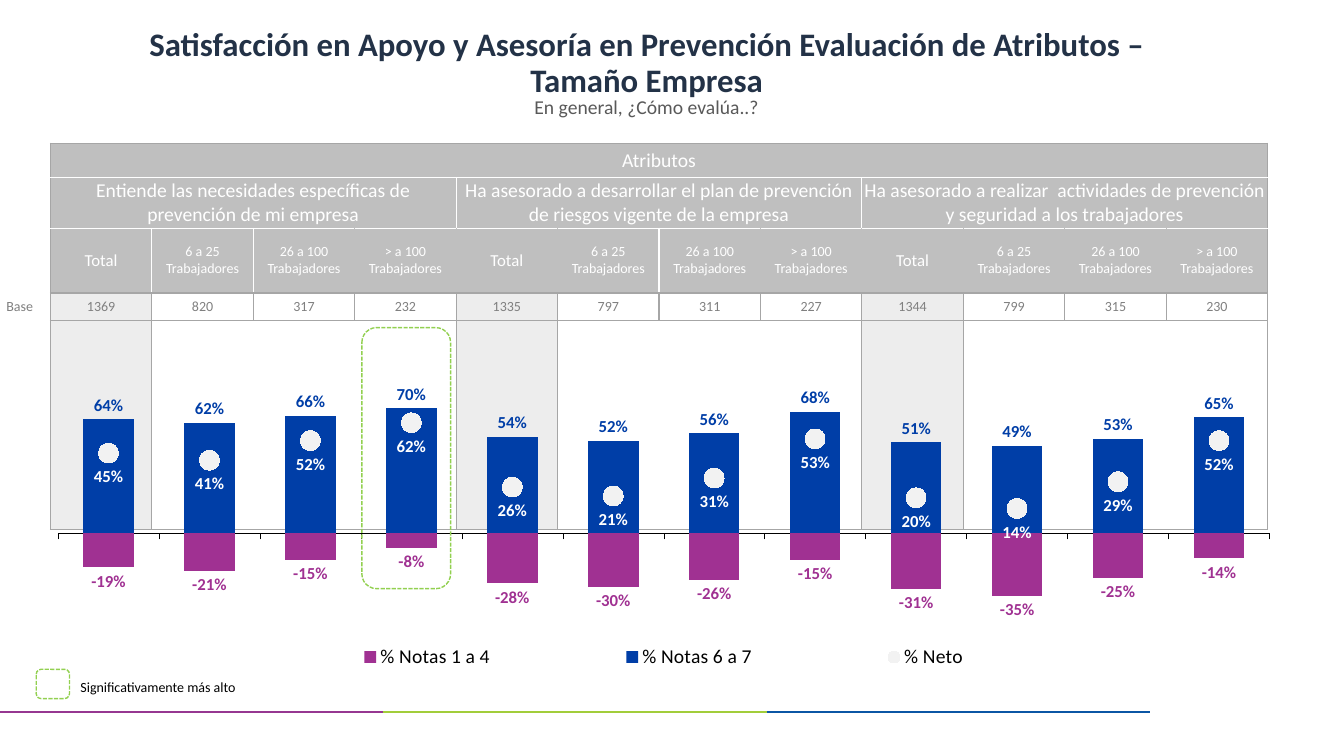
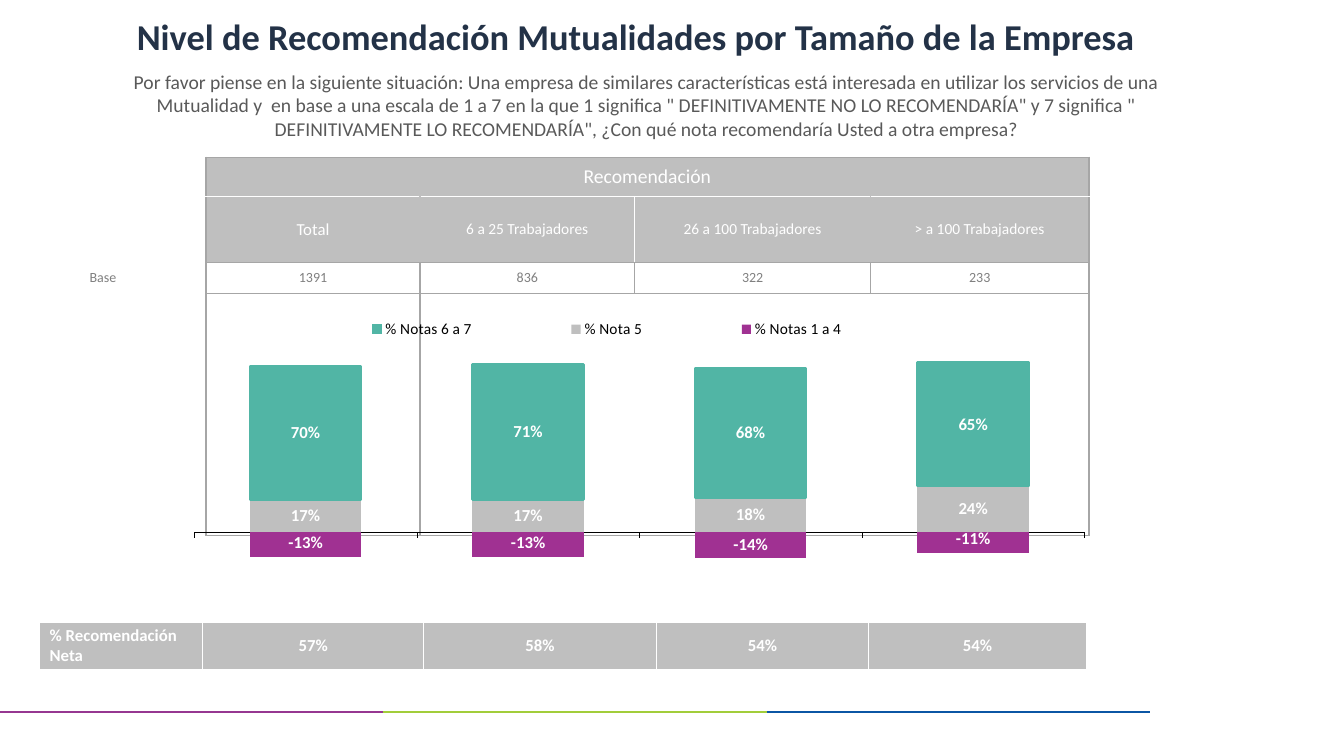
from copy import deepcopy
from dataclasses import dataclass

from lxml import etree
from pptx import Presentation
from pptx.chart.data import CategoryChartData
from pptx.dml.color import RGBColor
from pptx.enum.chart import (XL_CHART_TYPE, XL_LABEL_POSITION, XL_LEGEND_POSITION,
                             XL_MARKER_STYLE, XL_TICK_LABEL_POSITION, XL_TICK_MARK)
from pptx.enum.dml import MSO_LINE
from pptx.enum.shapes import MSO_CONNECTOR, MSO_SHAPE
from pptx.enum.text import MSO_ANCHOR, PP_ALIGN
from pptx.oxml.ns import qn
from pptx.util import Inches, Pt

CLUSTERED, STACKED = XL_CHART_TYPE.COLUMN_CLUSTERED, XL_CHART_TYPE.COLUMN_STACKED
OUTSIDE, INSIDE = XL_LABEL_POSITION.OUTSIDE_END, XL_LABEL_POSITION.INSIDE_END
CENTRED, BELOW = XL_LABEL_POSITION.CENTER, XL_LABEL_POSITION.BELOW
LEFT, CENTER = PP_ALIGN.LEFT, PP_ALIGN.CENTER
TOP, MIDDLE = MSO_ANCHOR.TOP, MSO_ANCHOR.MIDDLE
BLANK_LAYOUT = 6
GRID_COLUMNS, GRID_ROWS = 40, 22.5
SIZES = ["6 a 25 Trabajadores", "26 a 100 Trabajadores", "> a 100 Trabajadores"]


@dataclass(frozen=True)
class Theme:
    font: str = "Calibri"
    chart_font: str = "TeX Gyre Adventor"
    navy: str = "233247"
    text: str = "595959"
    muted: str = "808080"
    black: str = "000000"
    white: str = "FFFFFF"
    band: str = "BFBFBF"
    rule: str = "A6A6A6"
    shade: str = "EDEDED"
    dot: str = "F2F2F2"
    purple: str = "A03192"
    blue: str = "003EA7"
    teal: str = "51B5A5"
    highlight: str = "92D050"
    footer: tuple = ("963791", "A2CD3A", "0B56A4")
    title_size: float = 26
    long_title_size: float = 23.4
    body_size: float = 14
    label_size: float = 12
    head_size: float = 11
    small_size: float = 10


THEME = Theme()


@dataclass(frozen=True)
class CellStyle:
    fill: str = None
    size: float = THEME.small_size
    colour: str = THEME.white
    side: str = THEME.white
    top: str = THEME.white
    bottom: str = THEME.white
    outer: str = THEME.rule
    bold: bool = False
    align: PP_ALIGN = CENTER
    inset: float = 0.06


MARGIN = CellStyle(colour=THEME.muted)
CAPTION = CellStyle(THEME.band, THEME.body_size, top=THEME.rule)
GROUP = CellStyle(THEME.band, THEME.body_size)
TOTAL_HEAD = CellStyle(THEME.band, THEME.label_size, side=THEME.band, bottom=THEME.rule)
SMALL_HEAD = CellStyle(THEME.band, THEME.small_size, side=THEME.band, bottom=THEME.rule)
WIDE_HEAD = CellStyle(THEME.band, THEME.head_size, side=THEME.band, bottom=THEME.rule)
PLAIN = CellStyle(None, THEME.small_size, THEME.muted, THEME.rule, THEME.rule, THEME.rule)
SHADED = CellStyle(THEME.shade, THEME.small_size, THEME.muted, THEME.rule, THEME.rule, THEME.rule)
NET = CellStyle(THEME.band, THEME.label_size, outer=THEME.white, bold=True)
NET_LABEL = CellStyle(THEME.band, THEME.label_size, outer=THEME.white, bold=True,
                      align=LEFT, inset=0.3)


@dataclass(frozen=True)
class Measure:
    """One chart series and the look of its labels."""
    name: str
    values: tuple
    colour: str
    label_colour: str
    label_position: XL_LABEL_POSITION
    outline: str = None
    as_dots: bool = False


def units(value):
    """Turn grid units into slide lengths; a grid unit is a third of an inch."""
    return Inches(value / 3)


def rgb(colour):
    return RGBColor.from_string(colour)


def child(parent, tag, **attributes):
    return etree.SubElement(parent, qn(tag), **attributes)


def set_font(font, size, colour, bold=False, name=THEME.font):
    font.name, font.size, font.bold = name, Pt(size), bold
    font.color.rgb = rgb(colour)


def set_layout(parent, index, shares, inner=False):
    """Fix a chart part at shares (left, top, width, height) of the chart."""
    for old in parent.findall(qn("c:layout")):
        parent.remove(old)
    layout = etree.Element(qn("c:layout"))
    parent.insert(index, layout)
    manual = child(layout, "c:manualLayout")
    if inner:
        child(manual, "c:layoutTarget", val="inner")
    for side in "xy":
        child(manual, f"c:{side}Mode", val="edge")
    for side, share in zip("xywh", shares):
        child(manual, f"c:{side}", val=str(share))


def set_borders(cell, left, right, top, bottom):
    properties = cell._tc.get_or_add_tcPr()
    sides = zip(("a:lnL", "a:lnR", "a:lnT", "a:lnB"), (left, right, top, bottom))
    for position, (tag, colour) in enumerate(sides):
        line = etree.Element(qn(tag), w=str(Pt(1)))
        child(child(line, "a:solidFill"), "a:srgbClr", val=colour)
        properties.insert(position, line)


def move_to_lines(chart, index):
    """Move one column series to a line plot on the same axes."""
    columns = chart.plots[0]._element
    series = columns.findall(qn("c:ser"))[index]
    for flag in series.findall(qn("c:invertIfNegative")):
        series.remove(flag)
    lines = etree.Element(qn("c:lineChart"))
    columns.addnext(lines)
    child(lines, "c:grouping", val="standard")
    child(lines, "c:varyColors", val="0")
    lines.append(series)
    child(lines, "c:marker", val="1")
    for axis in columns.findall(qn("c:axId")):
        lines.append(deepcopy(axis))


class SurveyDeck:
    def __init__(self):
        self.deck = Presentation()
        self.deck.slide_width, self.deck.slide_height = units(GRID_COLUMNS), units(GRID_ROWS)
        self.page = None

    def new_page(self):
        self.page = self.deck.slides.add_slide(self.deck.slide_layouts[BLANK_LAYOUT])
        step, height = 11.41, 21.18
        for number, colour in enumerate(THEME.footer):
            line = self.page.shapes.add_connector(
                MSO_CONNECTOR.STRAIGHT, units(number * step), units(height),
                units((number + 1) * step), units(height))
            line.line.color.rgb, line.line.width = rgb(colour), Pt(1.5)
            child(line._element.spPr, "a:effectLst")

    def text(self, words, place, size, colour, bold=False, align=CENTER, anchor=TOP, spacing=1.0):
        box = self.page.shapes.add_textbox(*map(units, place))
        frame = box.text_frame
        frame.word_wrap, frame.vertical_anchor = True, anchor
        para = frame.paragraphs[0]
        para.alignment, para.line_spacing = align, spacing
        span = para.add_run()
        span.text = words
        set_font(span.font, size, colour, bold)

    def title(self, words, left, top, size=THEME.title_size):
        self.text(words, (left, top, 32.37, 1.83), size, THEME.navy, True,
                  anchor=MIDDLE, spacing=0.9)

    def question(self, words, top, height):
        self.text(words, (3.06, top, 32.37, height), THEME.body_size, THEME.text)

    def highlight(self, *place):
        frame = self.page.shapes.add_shape(MSO_SHAPE.ROUNDED_RECTANGLE, *map(units, place))
        frame.shadow.inherit = False
        frame.fill.background()
        frame.line.color.rgb, frame.line.width = rgb(THEME.highlight), Pt(1)
        frame.line.dash_style = MSO_LINE.SQUARE_DOT

    def table(self, left, top, widths, bands, white_joints=()):
        """Draw bands of (height, cells), each cell being (text, style, span)."""
        table = self.page.shapes.add_table(
            len(bands), len(widths), units(left), units(top), units(sum(widths)),
            units(sum(height for height, _ in bands))).table
        table.first_row = table.horz_banding = False
        for column, width in zip(table.columns, widths):
            column.width = units(width)
        for row, (height, cells) in enumerate(bands):
            table.rows[row].height = units(height)
            start = 0
            for words, style, span in cells:
                end = start + span
                joints = white_joints if style.side == THEME.band else ()
                left_edge = THEME.white if start in joints else style.side
                right_edge = THEME.white if end in joints else style.side
                if start == 1:
                    left_edge = style.outer
                if end in (1, len(widths)):
                    right_edge = style.outer
                if span > 1:
                    table.cell(row, start).merge(table.cell(row, end - 1))
                for column in range(start, end):
                    self.style_cell(table.cell(row, column), style)
                    set_borders(table.cell(row, column), left_edge, right_edge,
                                style.top, style.bottom)
                if words:
                    para = table.cell(row, start).text_frame.paragraphs[0]
                    para.alignment = style.align
                    run = para.add_run()
                    run.text = words
                    set_font(run.font, style.size, style.colour, style.bold)
                start = end

    @staticmethod
    def style_cell(cell, style):
        cell.margin_left = cell.margin_right = units(style.inset)
        cell.margin_top = cell.margin_bottom = 0
        cell.vertical_anchor = MIDDLE
        if style.fill:
            cell.fill.solid()
            cell.fill.fore_color.rgb = rgb(style.fill)
        else:
            cell.fill.background()

    def chart(self, kind, place, measures, plot_shares, legend_shares, legend_size):
        data = CategoryChartData(number_format="0%")
        data.categories = [str(n + 1) for n in range(len(measures[0].values))]
        for measure in measures:
            data.add_series(measure.name, measure.values)
        chart = self.page.shapes.add_chart(kind, *map(units, place), data).chart
        chart.has_title = False
        set_font(chart.font, 13.7, THEME.black, True, THEME.chart_font)
        plot = chart.plots[0]
        plot.gap_width, plot.overlap, plot.vary_by_categories = 100, 100, False
        for index, measure in enumerate(measures):
            if measure.as_dots:
                move_to_lines(chart, index)
        for series, measure in zip(chart.series, measures):
            self.style_series(series, measure)
        values, categories = chart.value_axis, chart.category_axis
        values.minimum_scale, values.maximum_scale, values.major_unit = -0.6, 1, 0.2
        values.has_major_gridlines = values.visible = False
        categories.tick_label_position = XL_TICK_LABEL_POSITION.NONE
        categories.major_tick_mark = XL_TICK_MARK.OUTSIDE
        categories.format.line.color.rgb = rgb(THEME.black)
        categories.format.line.width = Pt(0.25)
        chart.has_legend = True
        legend = chart.legend
        legend.position, legend.include_in_layout = XL_LEGEND_POSITION.LEFT, False
        set_font(legend.font, legend_size, THEME.black)
        set_layout(legend._element, 1, legend_shares)
        set_layout(plot._element.getparent(), 0, plot_shares, inner=True)

    @staticmethod
    def style_series(series, measure):
        look = series.format
        if measure.as_dots:
            series.smooth = False
            look.line.fill.background()
            series.marker.style, series.marker.size = XL_MARKER_STYLE.CIRCLE, 14
            look = series.marker.format
            look.line.fill.background()
        look.fill.solid()
        look.fill.fore_color.rgb = rgb(measure.colour)
        if measure.outline:
            look.line.color.rgb, look.line.width = rgb(measure.outline), Pt(1.75)
        labels = series.data_labels
        labels.show_value, labels.position = True, measure.label_position
        labels.number_format, labels.number_format_is_linked = "0%", False
        set_font(labels.font, THEME.label_size, measure.label_colour, True)


def attributes_page(survey):
    survey.new_page()
    groups = ["Entiende las necesidades específicas de prevención de mi empresa",
              "Ha asesorado a desarrollar el plan de prevención de riesgos vigente de la empresa",
              "Ha asesorado a realizar  actividades de prevención y seguridad a los trabajadores"]
    bases = [1369, 820, 317, 232, 1335, 797, 311, 227, 1344, 799, 315, 230]
    blank = ("", MARGIN, 1)
    heads = [("Total", TOTAL_HEAD, 1)] + [(size, SMALL_HEAD, 1) for size in SIZES]
    counts = [(str(base), PLAIN if n % 4 else SHADED, 1) for n, base in enumerate(bases)]
    survey.table(-0.33, 4.26, [1.83] + [3.02] * 12, [
        (1.03, [blank, ("Atributos", CAPTION, 12)]),
        (1.5, [blank] + [(group, GROUP, 4) for group in groups]),
        (1.93, [blank] + heads * 3),
        (0.81, [("Base", MARGIN, 1)] + counts),
        (6.24, [blank] + [("", SHADED, 1), ("", PLAIN, 3)] * 3)], (2, 3, 7))
    survey.chart(CLUSTERED, (0.6, 10.2, 37.56, 12.15), [
        Measure("% Notas 1 a 4", (-0.19, -0.21, -0.15, -0.08, -0.28, -0.3, -0.26, -0.15,
                                  -0.31, -0.35, -0.25, -0.14),
                THEME.purple, THEME.purple, OUTSIDE),
        Measure("% Notas 6 a 7", (0.64, 0.62, 0.66, 0.7, 0.54, 0.52, 0.56, 0.68,
                                  0.51, 0.49, 0.53, 0.65),
                THEME.blue, THEME.blue, OUTSIDE),
        Measure("% Neto", (0.45, 0.41, 0.52, 0.62, 0.26, 0.21, 0.31, 0.53,
                           0.2, 0.14, 0.29, 0.52),
                THEME.dot, THEME.white, BELOW, as_dots=True)],
        (0.03, 0.03, 0.96, 0.7), (0.17, 0.72, 0.68, 0.1), THEME.body_size)
    survey.highlight(1.08, 19.92, 0.99, 0.87)
    survey.text("Significativamente más alto", (2.1, 20.04, 5.7, 0.81),
                THEME.small_size, THEME.black, align=LEFT)
    survey.highlight(10.77, 9.75, 2.64, 7.77)
    survey.question("En general, ¿Cómo evalúa..?", 2.67, 1.71)
    survey.title("Satisfacción en Apoyo y Asesoría en Prevención Evaluación de Atributos – "
                 "Tamaño Empresa", 3.06, 0.99, THEME.long_title_size)


def recommendation_page(survey):
    survey.new_page()
    blank = ("", MARGIN, 1)
    survey.table(0, 4.68, [6.13, 6.37, 6.39, 7.02, 6.5], [
        (1.17, [blank, ("Recomendación", CAPTION, 4)]),
        (1.96, [blank, ("Total", TOTAL_HEAD, 1)] + [(size, WIDE_HEAD, 1) for size in SIZES]),
        (0.93, [("Base", MARGIN, 1)] + [(str(n), PLAIN, 1) for n in (1391, 836, 322, 233)]),
        (7.2, [blank, ("", PLAIN, 1), ("", PLAIN, 3)])], (3,))
    survey.title("Nivel de Recomendación Mutualidades por Tamaño de la Empresa", 2.76, 0.24)
    survey.question(
        "Por favor piense en la siguiente situación: Una empresa de similares características "
        "está interesada en utilizar los servicios de una Mutualidad y  en base a una escala de "
        "1 a 7 en la que 1 significa \" DEFINITIVAMENTE NO LO RECOMENDARÍA\" y 7 significa "
        "\" DEFINITIVAMENTE LO RECOMENDARÍA\", ¿Con qué nota recomendaría Usted a otra empresa?",
        1.92, 3.12)
    survey.chart(STACKED, (4.68, 8.58, 27.6, 12.24), [
        Measure("% Notas 1 a 4", (-0.13, -0.13, -0.14, -0.11), THEME.purple, THEME.white, INSIDE),
        Measure("% Nota 5", (0.17, 0.17, 0.18, 0.24), THEME.band, THEME.white, CENTRED),
        Measure("% Notas 6 a 7", (0.7, 0.71, 0.68, 0.65), THEME.teal, THEME.white, CENTRED,
                outline=THEME.teal)],
        (0.04, 0.13, 0.96, 0.74), (0.13, 0.06, 0.71, 0.08), THEME.head_size)
    shares = [(share, NET, 1) for share in ("57%", "58%", "54%", "54%")]
    survey.table(1.18, 18.51, [4.85, 6.58, 6.93, 6.31, 6.49],
                 [(1.43, [("% Recomendación Neta", NET_LABEL, 1)] + shares)])


def main():
    survey = SurveyDeck()
    attributes_page(survey)
    recommendation_page(survey)
    survey.deck.save("out.pptx")


if __name__ == "__main__":
    main()
